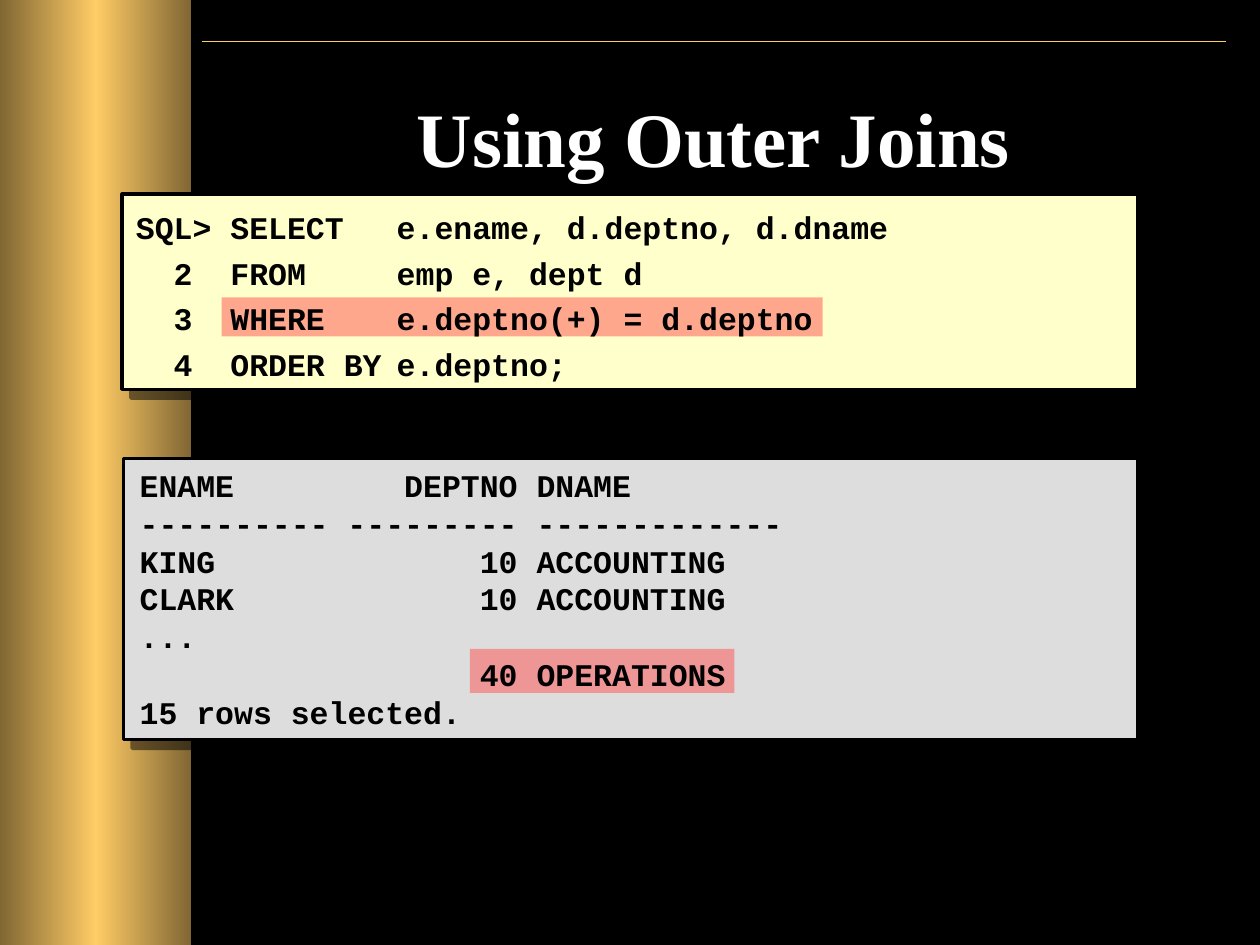
from dataclasses import dataclass

from lxml.etree import SubElement
from pptx import Presentation
from pptx.dml.color import RGBColor
from pptx.enum.shapes import MSO_CONNECTOR, MSO_SHAPE
from pptx.enum.text import MSO_ANCHOR, MSO_AUTO_SIZE, PP_ALIGN
from pptx.oxml import parse_xml
from pptx.oxml.ns import nsdecls, qn
from pptx.util import Inches, Pt


@dataclass(frozen=True)
class Theme:
    background: str = "000000"
    gold: str = "FFCC66"
    dark_gold: str = "806633"
    query_fill: str = "FFFFCC"
    result_fill: str = "DDDDDD"
    highlight: str = "FF5050"
    code: str = "000000"
    title: str = "FFFFFF"
    title_font: str = "Times New Roman"
    code_font: str = "Courier New"
    title_size: int = 44
    code_size: int = 18


theme = Theme()


def add_rectangle(bounds, color):
    shape = slide.shapes.add_shape(MSO_SHAPE.RECTANGLE, *map(Inches, bounds))
    shape.shadow.inherit = False
    shape.fill.solid()
    shape.fill.fore_color.rgb = RGBColor.from_string(color)
    shape.line.fill.background()
    return shape


def add_code(bounds, lines, tabs, anchor, line_spacing):
    text_frame = slide.shapes.add_textbox(*map(Inches, bounds)).text_frame
    text_frame.word_wrap = True
    text_frame.vertical_anchor = anchor
    text_frame.text = "\n".join(lines)
    for paragraph in text_frame.paragraphs:
        paragraph.line_spacing = line_spacing
        paragraph.font.name = theme.code_font
        paragraph.font.size = Pt(theme.code_size)
        paragraph.font.bold = True
        paragraph.font.color.rgb = RGBColor.from_string(theme.code)
        properties = paragraph.font._element.getparent()
        tab_list = parse_xml(f"<a:tabLst {nsdecls('a')}/>")
        for position, alignment in tabs:
            SubElement(tab_list, qn("a:tab"), pos=str(Inches(position)), algn=alignment)
        properties.insert(properties.index(paragraph.font._element), tab_list)


presentation = Presentation()
presentation.slide_width = Inches(10)
presentation.slide_height = Inches(7.5)
slide = presentation.slides.add_slide(presentation.slide_layouts[5])
slide.background.fill.solid()
slide.background.fill.fore_color.rgb = RGBColor.from_string(theme.background)

title = slide.shapes.title
title.left, title.top, title.width, title.height = map(Inches, (1.59, 0.67, 8.15, 1.25))
title.text_frame.text = "Using Outer Joins"
title.text_frame.auto_size = MSO_AUTO_SIZE.NONE
title.text_frame.vertical_anchor = MSO_ANCHOR.TOP
paragraph = title.text_frame.paragraphs[0]
paragraph.alignment = PP_ALIGN.CENTER
paragraph.font.name = theme.title_font
paragraph.font.size = Pt(theme.title_size)
paragraph.font.bold = True
paragraph.font.color.rgb = RGBColor.from_string(theme.title)

top_rule = slide.shapes.add_connector(
    MSO_CONNECTOR.STRAIGHT, Inches(1.6), Inches(0.33), Inches(9.73), Inches(0.33)
)
top_rule.line.color.rgb = RGBColor.from_string(theme.gold)
top_rule.line.width = Pt(1)
SubElement(top_rule._element.spPr, qn("a:effectLst"))

side_band = add_rectangle((0, 0, 1.52, 7.5), theme.gold)
band_properties = side_band._element.spPr
band_properties.replace(
    band_properties.find(qn("a:solidFill")),
    parse_xml(
        f'<a:gradFill {nsdecls("a")} rotWithShape="1"><a:gsLst>'
        f'<a:gs pos="0"><a:srgbClr val="{theme.dark_gold}"/></a:gs>'
        f'<a:gs pos="50000"><a:srgbClr val="{theme.gold}"/></a:gs>'
        f'<a:gs pos="100000"><a:srgbClr val="{theme.dark_gold}"/></a:gs>'
        '</a:gsLst><a:lin ang="0" scaled="1"/></a:gradFill>'
    ),
)

for bounds, color in (
    ((0.97, 1.54, 8.06, 1.55), theme.query_fill),
    ((0.98, 3.64, 8.05, 2.23), theme.result_fill),
):
    panel = add_rectangle(bounds, color)
    panel.line.color.rgb = RGBColor.from_string(theme.code)
    panel.line.width = Pt(2)
    panel._element.spPr.find(qn("a:effectLst")).append(
        parse_xml(
            f'<a:outerShdw {nsdecls("a")} blurRad="0" dist="{Pt(7.1)}" dir="2700000" '
            f'algn="ctr" rotWithShape="0"><a:srgbClr val="{theme.background}">'
            '<a:alpha val="50000"/></a:srgbClr></a:outerShdw>'
        )
    )

for bounds in ((1.76, 2.36, 4.77, 0.31), (3.73, 5.15, 2.1, 0.35)):
    highlight = add_rectangle(bounds, theme.highlight)
    color_element = highlight._element.spPr.find(qn("a:solidFill"))[0]
    SubElement(color_element, qn("a:alpha"), val="50000")

query_lines = (
    "SQL>\tSELECT\te.ename, d.deptno, d.dname",
    "\t2\tFROM\temp e, dept d",
    "\t3\tWHERE\te.deptno(+) = d.deptno",
    "\t4\tORDER BY\te.deptno;",
)
query_tabs = ((0.3, "l"), (0.75, "l"), (2.07, "l"))
add_code((0.98, 1.53, 8.08, 1.57), query_lines, query_tabs, MSO_ANCHOR.MIDDLE, 1.2)

result_lines = (
    "ENAME\tDEPTNO\tDNAME",
    "----------\t---------\t-------------",
    "KING\t10\tACCOUNTING",
    "CLARK\t10\tACCOUNTING",
    "...",
    "\t40\tOPERATIONS",
    "15 rows selected.",
)
result_tabs = ((3, "r"), (3.15, "l"))
add_code((1.01, 3.65, 8.02, 2.2), result_lines, result_tabs, MSO_ANCHOR.TOP, 1.0)

presentation.save("out.pptx")
